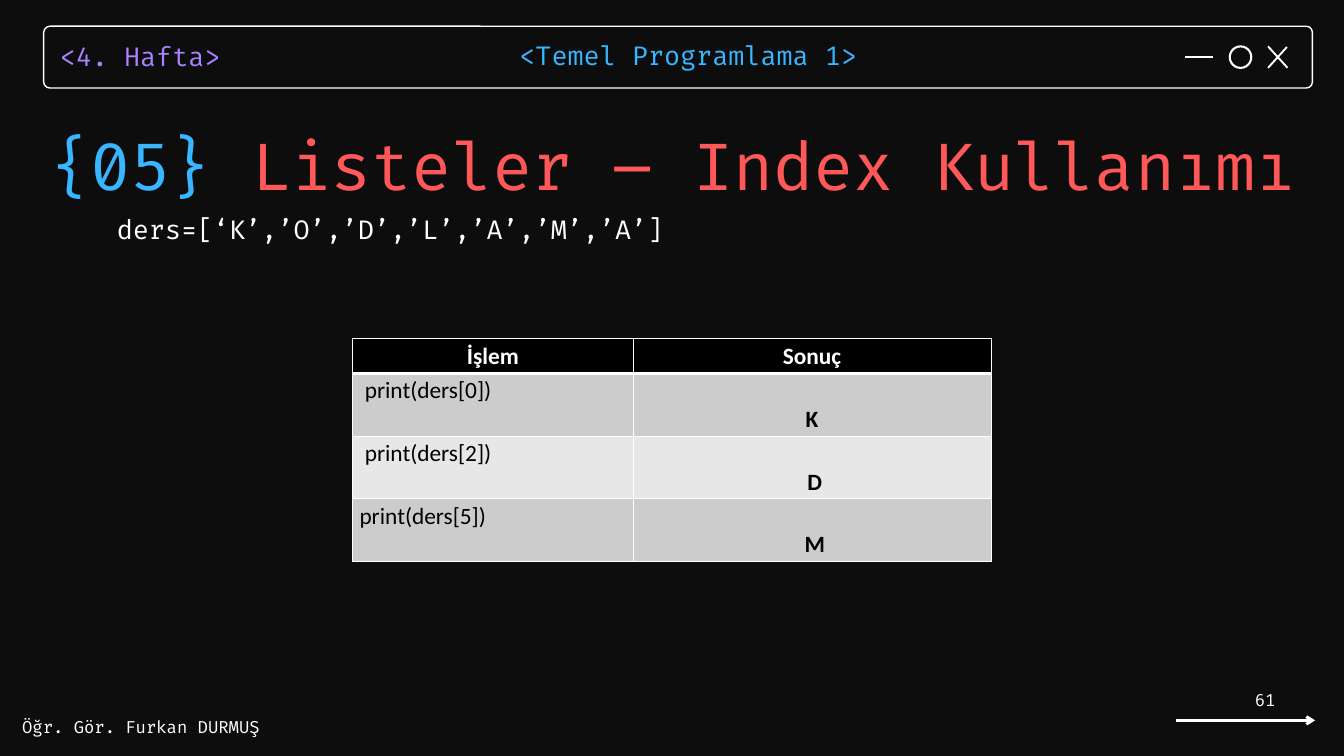
from dataclasses import dataclass

from lxml.etree import SubElement as Sub
from pptx import Presentation
from pptx.dml.color import RGBColor
from pptx.enum.shapes import MSO_CONNECTOR as Link, MSO_SHAPE as Kind
from pptx.enum.text import MSO_ANCHOR as Anchor, PP_ALIGN as Align
from pptx.oxml import parse_xml
from pptx.oxml.ns import qn
from pptx.util import Inches, Pt

CELL = 0.25  # the slide is a grid of 80 columns by 45 rows
COLS, ROWS = 80, 45
NS = "http://schemas.openxmlformats.org/drawingml/2006/main"
CODE, SANS = "Fira Code", "Calibri"
WHITE, BLACK, BLUE, RED, LILAC = "FFFFFF", "000000", "38B6FF", "FF5858", "AB81FF"


@dataclass
class Box:
    col: float
    row: float
    wide: float
    high: float


@dataclass
class Label:
    text: str
    box: Box
    size: float = 28
    color: str = WHITE
    lead: float | None = None


@dataclass
class Line:
    col: float
    row: float
    to_col: float
    to_row: float
    width: float = 2
    arrow: bool = False


def grid(count: float) -> int:
    return Inches(count * CELL)


def place(box: Box) -> tuple:
    return tuple(grid(v) for v in (box.col, box.row, box.wide, box.high))


def paint(code: str) -> RGBColor:
    return RGBColor.from_string(code)


def style(run, size: float, color: str, face: str = CODE, bold: bool = False) -> None:
    font = run.font
    font.name, font.size, font.bold = face, Pt(size), bold
    font.color.rgb = paint(color)


def bare(frame, anchor=Anchor.TOP) -> None:
    frame.word_wrap = True
    frame.vertical_anchor = anchor
    frame.margin_left = frame.margin_right = 0
    frame.margin_top = frame.margin_bottom = 0


def write(slide, label: Label):
    frame = slide.shapes.add_textbox(*place(label.box)).text_frame
    bare(frame)
    frame.text = label.text
    para = frame.paragraphs[0]
    if label.lead:
        para.line_spacing = Pt(label.lead)
    style(para.runs[0], label.size, label.color)
    return frame


def draw(slide, line: Line) -> None:
    ends = (grid(v) for v in (line.col, line.row, line.to_col, line.to_row))
    link = slide.shapes.add_connector(Link.STRAIGHT, *ends)
    link.line.color.rgb = paint(WHITE)
    link.line.width = Pt(line.width)
    if line.arrow:
        Sub(link.line._get_or_add_ln(), qn("a:tailEnd"), type="arrow")
    Sub(link._element.spPr, qn("a:effectLst"))


def outline(slide, kind, box: Box, width: float):
    shape = slide.shapes.add_shape(kind, *place(box))
    shape.shadow.inherit = False
    shape.fill.background()
    shape.line.color.rgb = paint(WHITE)
    shape.line.width = Pt(width)
    return shape


def border(cell, top: float, low: float) -> None:
    props = cell._tc.get_or_add_tcPr()
    sides = {"lnL": 1, "lnR": 1, "lnT": top, "lnB": low}
    for spot, (side, width) in enumerate(sides.items()):
        props.insert(spot, parse_xml(
            f'<a:{side} xmlns:a="{NS}" w="{Pt(width)}"><a:solidFill>'
            f'<a:srgbClr val="{WHITE}"/></a:solidFill></a:{side}>'))


def fill_cell(cell, text: str, row: int, col: int) -> None:
    head = row == 0
    cell.fill.solid()
    cell.fill.fore_color.rgb = paint(BLACK if head else ("E7E7E7", "CCCCCC")[row % 2])
    border(cell, 3 if row == 1 else 1, 3 if head else 1)
    cell.text = text
    para = cell.text_frame.paragraphs[0]
    if head or col == 1:
        para.alignment = Align.CENTER
    if not head and col == 1:
        para.line_spacing = 2.0
    style(para.runs[0], 25, WHITE if head else BLACK, SANS, head or col == 1)


def add_grid(slide, data: list, box: Box, widths: tuple) -> None:
    table = slide.shapes.add_table(len(data), len(widths), *place(box)).table
    table.horz_banding = False
    for col, wide in zip(table.columns, widths):
        col.width = grid(wide)
    for r, texts in enumerate(data):
        for c, text in enumerate(texts):
            fill_cell(table.cell(r, c), text, r, c)


def set_title(slide, parts: list, box: Box) -> None:
    title = slide.shapes.title
    title.left, title.top, title.width, title.height = place(box)
    bare(title.text_frame)
    para = title.text_frame.paragraphs[0]
    para.alignment = Align.LEFT
    para.line_spacing = Pt(102.6)
    for text, color in parts:
        run = para.add_run()
        run.text = text
        style(run, 70, color)


LINES = [
    Line(75.48, 2.76, 76.64, 4.04),  # close
    Line(76.6, 2.8, 75.48, 4.04),
    Line(70.56, 3.4, 72.2, 3.4),  # minimise
    Line(70, 42.88, 78.28, 42.88, 3, True),  # page arrow
]
LABELS = [
    Label("<Temel Programlama 1>", Box(30.92, 2.04, 21.16, 2.12), color=BLUE, lead=39.2),
    Label("<4. Hafta>", Box(3.56, 2.08, 13.6, 2.12), color=LILAC, lead=39.2),
    Label("Öğr. Gör. Furkan DURMUŞ", Box(1.32, 42.68, 14.68, 1.2), 18),
]
PAGE = Label("61", Box(67, 40.84, 8.92, 1.6), 18)
LIST = Label(" ders=[‘K’,’O’,’D’,’L’,’A’,’M’,’A’]", Box(6, 12.68, 69.48, 1.88))
DATA = [
    ("İşlem", "Sonuç"),
    (" print(ders[0])", "K"),
    (" print(ders[2])", " D"),
    ("print(ders[5])", " M"),
]


def main() -> None:
    deck = Presentation()
    deck.slide_width, deck.slide_height = grid(COLS), grid(ROWS)
    slide = deck.slides.add_slide(deck.slide_layouts[5])
    slide.background.fill.solid()
    slide.background.fill.fore_color.rgb = paint("0D0D0D")

    # Window bar, footer and page arrow
    frame = outline(slide, Kind.ROUNDED_RECTANGLE, Box(2.6, 1.56, 75.52, 3.68), 1.5)
    frame.adjustments[0] = 0.1
    outline(slide, Kind.OVAL, Box(73.2, 2.76, 1.28, 1.28), 2.25)
    for line in LINES:
        draw(slide, line)
    for label in LABELS:
        write(slide, label)
    page = write(slide, PAGE)
    page.vertical_anchor = Anchor.MIDDLE
    page.paragraphs[0].alignment = Align.RIGHT

    # Content
    set_title(slide, [("{05}", BLUE), (" Listeler – Index Kullanımı", RED)],
              Box(3, 6.44, 77, 5.64))
    write(slide, LIST).paragraphs[0].alignment = Align.JUSTIFY
    add_grid(slide, DATA, Box(21, 20.16, 38, 6.56), (16.68, 21.32))
    deck.save("out.pptx")


if __name__ == "__main__":
    main()
